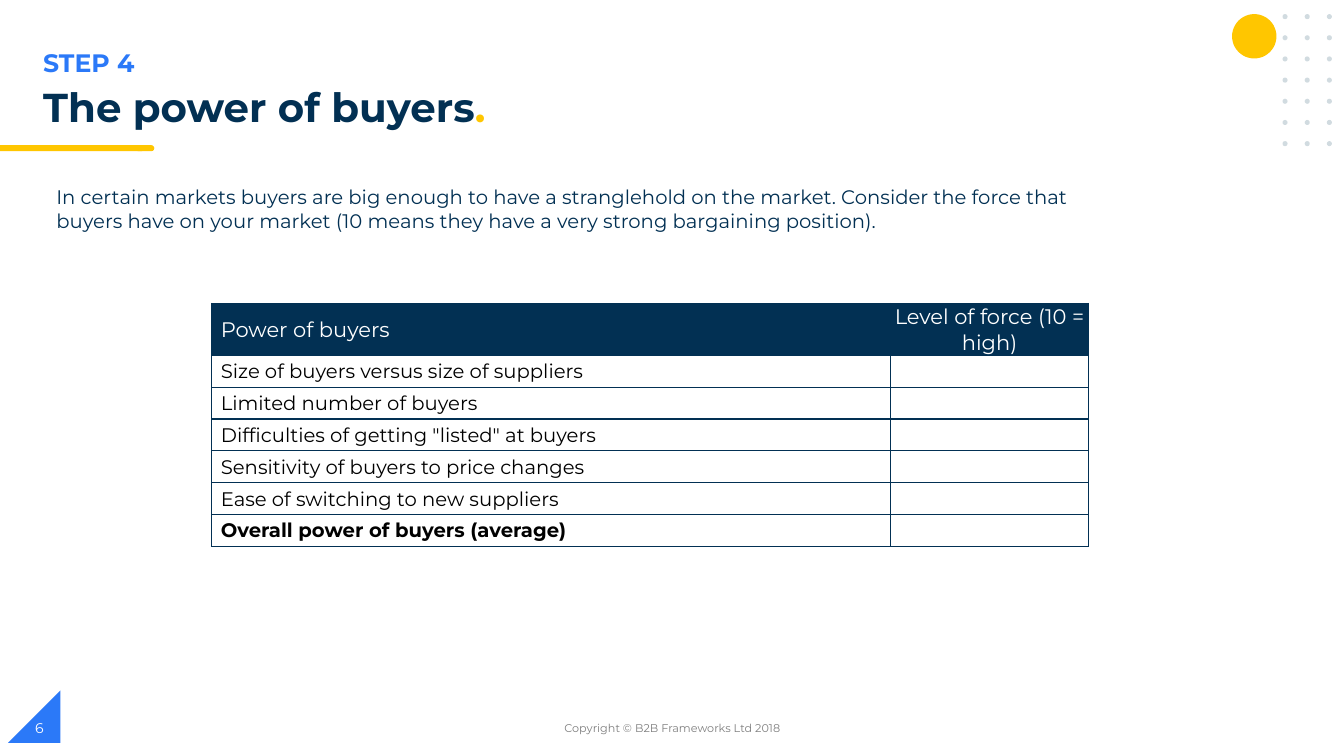
from lxml import etree
from pptx import Presentation
from pptx.dml.color import RGBColor
from pptx.enum.shapes import MSO_SHAPE as Preset
from pptx.enum.text import MSO_ANCHOR as Anchor, PP_ALIGN as Align
from pptx.oxml.ns import qn
from pptx.util import Inches, Pt

FONT = "Montserrat"
NAVY, BLUE, YELLOW = "023053", "2B79F8", "FFC600"
PALE, GREY, WHITE, BLACK = "D1DBE0", "7F7F7F", "FFFFFF", "000000"

DECORATIONS = [
    (Preset.RIGHT_TRIANGLE, (0.08, 6.85, 0.52, 0.52), BLUE),
    (Preset.OVAL, (12.22, 0.14, 0.44, 0.44), YELLOW),
    (Preset.FLOWCHART_TERMINATOR, (1.34, 1.44, 0.19, 0.06), YELLOW),
    (Preset.RECTANGLE, (0, 1.44, 1.41, 0.06), YELLOW),
]
DOT_COLUMNS, DOT_ROWS = 3, 7
DOT_LEFT, DOT_TOP, DOT_SIZE = 12.72, 0.14, 0.05
DOT_STEP_X, DOT_STEP_Y = 0.22, 0.21

INTRO = (
    "In certain markets buyers are big enough to have a stranglehold on the market. "
    "Consider the force that buyers have on your market "
    "(10 means they have a very strong bargaining position)."
)
TEXTS = [
    ((0.33, 0.42, 6.69, 0.4), [("STEP 4", BLUE)], 18, True, Align.LEFT, Anchor.TOP, 1.0),
    ((0.33, 0.82, 9.03, 0.56), [("The power of buyers", NAVY), (".", YELLOW)],
     28.8, True, Align.LEFT, Anchor.TOP, 0.9),
    ((0.46, 1.79, 10.29, 0.57), [(INTRO, NAVY)], 14, False, Align.LEFT, Anchor.TOP, 1.0),
    ((4.42, 7.02, 4.5, 0.4), [("Copyright © B2B Frameworks Ltd 2018", GREY)],
     8, False, Align.CENTER, Anchor.MIDDLE, 1.0),
    ((0.25, 7.02, 3, 0.4), [("6", WHITE)], 10, False, Align.LEFT, Anchor.MIDDLE, 1.0),
]

HEADERS = ["Power of buyers", "Level of force (10 = high)"]
FACTORS = [
    "Size of buyers versus size of suppliers",
    "Limited number of buyers",
    'Difficulties of getting "listed" at buyers',
    "Sensitivity of buyers to price changes",
    "Ease of switching to new suppliers",
    "Overall power of buyers (average)",
]
TABLE_LEFT, TABLE_TOP = 2.1, 3.01
COLUMN_WIDTHS = [6.73, 1.97]
ROW_HEIGHTS = [0.5] + [0.31] * len(FACTORS)


def color(value):
    return RGBColor.from_string(value)


def add_run(paragraph, text, size, ink, bold=False):
    run = paragraph.add_run()
    run.text = text
    run.font.name = FONT
    run.font.size = Pt(size)
    run.font.bold = bold
    run.font.color.rgb = color(ink)


def add_shape(slide, preset, box, fill):
    shape = slide.shapes.add_shape(preset, *map(Inches, box))
    shape.shadow.inherit = False
    shape.fill.solid()
    shape.fill.fore_color.rgb = color(fill)
    shape.line.fill.background()
    return shape


def add_text(slide, box, runs, size, bold, align, anchor, spacing):
    frame = slide.shapes.add_textbox(*map(Inches, box)).text_frame
    frame.word_wrap = True
    frame.vertical_anchor = anchor
    paragraph = frame.paragraphs[0]
    paragraph.alignment = align
    paragraph.line_spacing = spacing
    for text, ink in runs:
        add_run(paragraph, text, size, ink, bold)


def add_borders(cell):
    properties = cell._tc.get_or_add_tcPr()
    for index, side in enumerate(("lnL", "lnR", "lnT", "lnB")):
        line = etree.Element(qn(f"a:{side}"), w=str(Pt(1)))
        fill = etree.SubElement(line, qn("a:solidFill"))
        etree.SubElement(fill, qn("a:srgbClr"), val=NAVY)
        properties.insert(index, line)


def add_force_table(slide):
    rows = [HEADERS] + [[factor, ""] for factor in FACTORS]
    table = slide.shapes.add_table(
        len(rows), len(HEADERS), Inches(TABLE_LEFT), Inches(TABLE_TOP),
        Inches(sum(COLUMN_WIDTHS)), Inches(sum(ROW_HEIGHTS)),
    ).table
    table.horz_banding = False
    for column, width in zip(table.columns, COLUMN_WIDTHS):
        column.width = Inches(width)
    for row_index, texts in enumerate(rows):
        table.rows[row_index].height = Inches(ROW_HEIGHTS[row_index])
        is_header = row_index == 0
        is_total = row_index == len(FACTORS)
        for column_index, text in enumerate(texts):
            cell = table.cell(row_index, column_index)
            is_label = column_index == 0
            cell.margin_left = Inches(0.09 if is_label else 0.01)
            cell.margin_right = cell.margin_top = Inches(0.01)
            cell.margin_bottom = 0
            cell.vertical_anchor = Anchor.MIDDLE if is_label else Anchor.BOTTOM
            if is_header:
                cell.fill.solid()
                cell.fill.fore_color.rgb = color(NAVY)
            else:
                cell.fill.background()
            add_borders(cell)
            paragraph = cell.text_frame.paragraphs[0]
            paragraph.alignment = Align.LEFT if is_label else Align.CENTER
            if text:
                add_run(paragraph, text, 15 if is_header else 14,
                        WHITE if is_header else BLACK, is_total)


def main():
    presentation = Presentation()
    presentation.slide_width = Inches(13.33)
    presentation.slide_height = Inches(7.5)
    slide = presentation.slides.add_slide(presentation.slide_layouts[6])
    for preset, box, fill in DECORATIONS:
        shape = add_shape(slide, preset, box, fill)
        if preset == Preset.RIGHT_TRIANGLE:
            shape._element.spPr.xfrm.set("flipH", "1")
    for row in range(DOT_ROWS):
        for column in range(DOT_COLUMNS):
            left = DOT_LEFT + column * DOT_STEP_X
            top = DOT_TOP + row * DOT_STEP_Y
            add_shape(slide, Preset.OVAL, (left, top, DOT_SIZE, DOT_SIZE), PALE)
    add_force_table(slide)
    for text in TEXTS:
        add_text(slide, *text)
    presentation.save("out.pptx")


if __name__ == "__main__":
    main()
